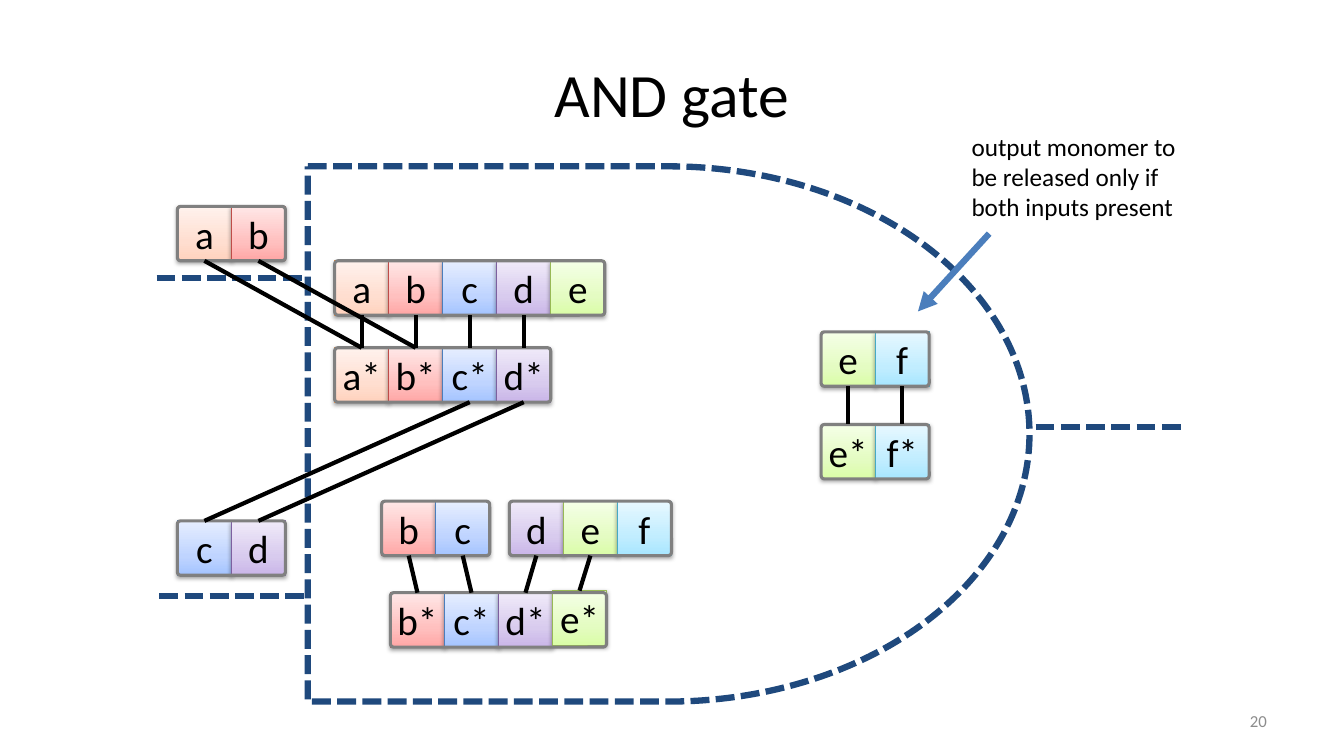
import copy

import pptx
import pptx.dml.color
import pptx.enum.dml
import pptx.enum.shapes
import pptx.enum.text
import pptx.oxml
import pptx.oxml.ns
import pptx.util

RGBColor = pptx.dml.color.RGBColor
SHAPE = pptx.enum.shapes.MSO_SHAPE
ALIGN = pptx.enum.text.PP_ALIGN
ANCHOR = pptx.enum.text.MSO_ANCHOR

BLACK = RGBColor(0x00, 0x00, 0x00)
GRAY = RGBColor(0x80, 0x80, 0x80)
NUMBER_GRAY = RGBColor(0x8C, 0x8C, 0x8C)
NAVY = RGBColor(0x1F, 0x49, 0x7D)
BLUE = RGBColor(0x4B, 0x7E, 0xBC)
ORANGE = RGBColor(0xF6, 0x92, 0x40)
RED = RGBColor(0xBF, 0x4C, 0x48)
PURPLE = RGBColor(0x7D, 0x60, 0xA0)
GREEN = RGBColor(0x98, 0xB9, 0x55)
CYAN = RGBColor(0x46, 0xAA, 0xC5)

DOMAINS = {
    "a": (ORANGE, RGBColor(0xFF, 0xD2, 0xBD), RGBColor(0xFF, 0xDE, 0xD0), RGBColor(0xFF, 0xF2, 0xED)),
    "b": (RED, RGBColor(0xFF, 0xA6, 0xA5), RGBColor(0xFF, 0xC0, 0xBF), RGBColor(0xFF, 0xE7, 0xE7)),
    "c": (BLUE, RGBColor(0xA4, 0xC4, 0xFF), RGBColor(0xBF, 0xD4, 0xFF), RGBColor(0xE6, 0xEE, 0xFF)),
    "d": (PURPLE, RGBColor(0xC9, 0xB5, 0xE8), RGBColor(0xD8, 0xCB, 0xEE), RGBColor(0xF0, 0xEA, 0xF9)),
    "e": (GREEN, RGBColor(0xDA, 0xFD, 0xA7), RGBColor(0xE4, 0xFC, 0xC2), RGBColor(0xF5, 0xFF, 0xE7)),
    "f": (CYAN, RGBColor(0xA7, 0xE6, 0xFF), RGBColor(0xC1, 0xED, 0xFF), RGBColor(0xE7, 0xF8, 0xFF)),
}
STOPS = (0, 0.35, 1)
NS = pptx.oxml.ns.nsdecls("a")
CELL_SHADOW = (
    f'<a:effectLst {NS}><a:outerShdw blurRad="40000" dist="20000" dir="5400000" rotWithShape="0">'
    '<a:srgbClr val="000000"><a:alpha val="38000"/></a:srgbClr></a:outerShdw></a:effectLst>'
)


class GateSlide:
    """A slide on a grid of 100 columns by 100 rows, with the style of the gate diagram."""

    FONT = "Calibri"
    CELL_WIDTH, CELL_HEIGHT = 4.02, 7.2

    def __init__(self, deck):
        self.column, self.row = deck.slide_width / 100, deck.slide_height / 100
        self.slide = deck.slides.add_slide(deck.slide_layouts[5])
        self.shapes = self.slide.shapes

    def at(self, column, row):
        return round(column * self.column), round(row * self.row)

    def box(self, column, row, width, height):
        return *self.at(column, row), *self.at(width, height)

    def set_text(self, holder, text, size, color=BLACK, align=ALIGN.LEFT, anchor=ANCHOR.MIDDLE):
        frame = holder.text_frame
        frame.word_wrap = True
        frame.vertical_anchor = anchor
        frame.text = text
        paragraph = frame.paragraphs[0]
        paragraph.alignment = align
        paragraph.font.name = self.FONT
        paragraph.font.size = pptx.util.Pt(size)
        paragraph.font.color.rgb = color
        return frame

    def title(self, text, box):
        heading = self.shapes.title
        heading.left, heading.top, heading.width, heading.height = self.box(*box)
        self.set_text(heading, text, 44, align=ALIGN.CENTER)

    def note(self, text, box, size, **style):
        self.set_text(self.shapes.add_textbox(*self.box(*box)), text, size, **style)

    def stroke(self, line, color, width, dashed=False):
        line.color.rgb = color
        line.width = pptx.util.Pt(width)
        if dashed:
            line.dash_style = pptx.enum.dml.MSO_LINE.SQUARE_DOT

    def outline(self, shapes, preset, box, color, width, dashed=False):
        border = shapes.add_shape(preset, *self.box(*box))
        border.shadow.inherit = False
        border.fill.background()
        self.stroke(border.line, color, width, dashed)
        return border

    def cell(self, shapes, label, column, row):
        edge, *shades = DOMAINS[label[0]]
        domain = shapes.add_shape(SHAPE.RECTANGLE, *self.box(column, row, self.CELL_WIDTH, self.CELL_HEIGHT))
        self.stroke(domain.line, edge, 0.75)
        domain.fill.gradient()
        domain.fill.gradient_angle = 90
        stop_list = domain._element.spPr.find(".//" + pptx.oxml.ns.qn("a:gsLst"))
        stop_list.append(copy.deepcopy(stop_list[0]))
        for stop, position, shade in zip(domain.fill.gradient_stops, STOPS, shades):
            stop.position, stop.color.rgb = position, shade
        domain._element.spPr.append(pptx.oxml.parse_xml(CELL_SHADOW))
        frame = self.set_text(domain, label, 28, align=ALIGN.CENTER)
        frame.margin_left = frame.margin_right = frame.margin_top = frame.margin_bottom = 0
        return domain

    def strand(self, labels, column, row, last_lift=0):
        labels = labels.split()
        shapes = self.shapes.add_group_shape().shapes
        cells = {}
        for i, label in enumerate(labels):
            lift = last_lift if i == len(labels) - 1 else 0
            cells[label[0]] = self.cell(shapes, label, column + i * self.CELL_WIDTH, row - lift)
        size = len(labels) * self.CELL_WIDTH, self.CELL_HEIGHT
        border = self.outline(shapes, SHAPE.ROUNDED_RECTANGLE, (column, row, *size), GRAY, 2.25)
        border.adjustments[0] = 0.06
        return cells

    def line(self, start, end, color, width, dashed=False, arrow=False):
        link = self.shapes.add_connector(
            pptx.enum.shapes.MSO_CONNECTOR.STRAIGHT, *self.at(*start), *self.at(*end))
        self.stroke(link.line, color, width, dashed)
        if arrow:
            link.line._get_or_add_ln().append(pptx.oxml.parse_xml(f'<a:tailEnd {NS} type="triangle"/>'))
        link._element.spPr.append(pptx.oxml.parse_xml(f"<a:effectLst {NS}/>"))
        return link

    def bonds(self, upper, lower, domains):
        for domain in domains:
            bond = self.line((0, 0), (0, 0), BLACK, 3)
            bond.begin_connect(upper[domain], 2)
            bond.end_connect(lower[domain], 0)


def main():
    deck = pptx.Presentation()
    deck.slide_width, deck.slide_height = pptx.util.Inches(13.33), pptx.util.Inches(7.5)
    gate = GateSlide(deck)
    gate.title("AND gate", (5, 4, 90, 16.7))
    gate.note("20", (71.7, 92.7, 23.3, 5.3), 12, color=NUMBER_GRAY, align=ALIGN.RIGHT)

    input_ab = gate.strand("a b", 13.2, 27.3)
    input_cd = gate.strand("c d", 13.2, 68.9)
    gate_top = gate.strand("a b c d e", 24.9, 34.5)
    gate_base = gate.strand("a* b* c* d*", 24.9, 46)
    spare_bc = gate.strand("b c", 28.4, 66.3)
    spare_def = gate.strand("d e f", 37.9, 66.3)
    spare_base = gate.strand("b* c* d* e*", 29.05, 78.4, last_lift=0.27)
    output = gate.strand("e f", 61.1, 43.9)
    output_base = gate.strand("e* f*", 61.1, 56.15)

    gate.bonds(gate_top, gate_base, "abcd")
    gate.bonds(spare_bc, spare_base, "bc")
    gate.bonds(spare_def, spare_base, "de")
    gate.bonds(output, output_base, "ef")

    gate.outline(gate.shapes, SHAPE.FLOWCHART_DELAY, (22.9, 22, 53.7, 70.8), NAVY, 4.5, dashed=True)
    for column, row in ((11.65, 36.8), (11.85, 78.8), (77.05, 56.5)):
        gate.line((column, row), (column + 11.2, row), NAVY, 4.5, dashed=True)

    gate.bonds(input_ab, gate_base, "ab")
    gate.bonds(gate_base, input_cd, "cd")

    gate.line((73.6, 30.9), (68.3, 41.2), BLUE, 4.5, arrow=True)
    gate.note("output monomer to be released only if both inputs present",
              (71.55, 16.7, 17.55, 13.5), 18, anchor=ANCHOR.TOP)
    deck.save("out.pptx")


if __name__ == "__main__":
    main()
